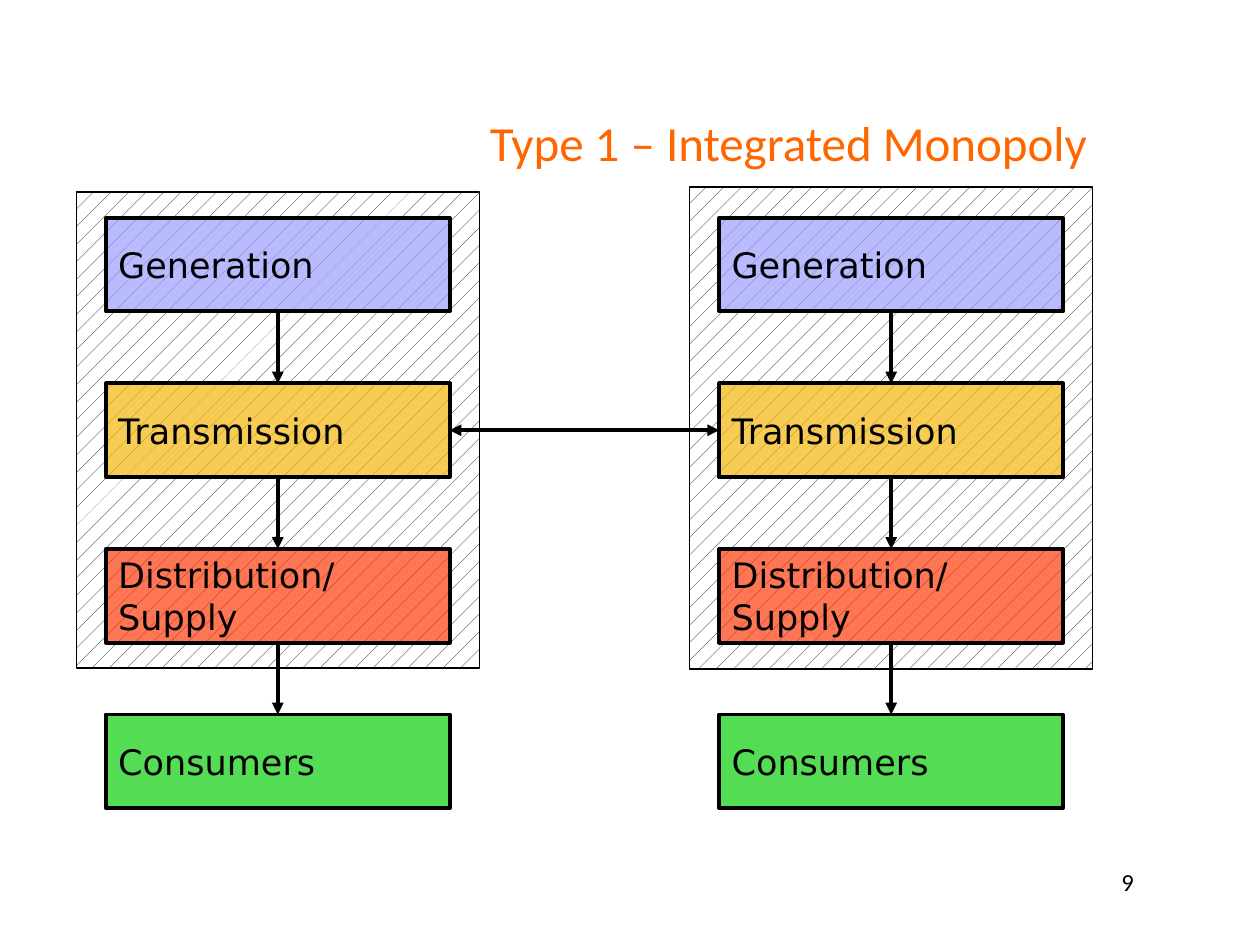
from dataclasses import dataclass

from lxml import etree
from pptx import Presentation
from pptx.dml.color import RGBColor
from pptx.enum.dml import MSO_PATTERN
from pptx.enum.shapes import MSO_CONNECTOR, MSO_SHAPE
from pptx.enum.text import MSO_ANCHOR, PP_ALIGN
from pptx.oxml.ns import qn
from pptx.util import Pt

RECTANGLE = MSO_SHAPE.RECTANGLE
STRAIGHT = MSO_CONNECTOR.STRAIGHT
DOTS = MSO_PATTERN.PERCENT_5
TOP, MIDDLE = MSO_ANCHOR.TOP, MSO_ANCHOR.MIDDLE
LEFT, CENTER, RIGHT = PP_ALIGN.LEFT, PP_ALIGN.CENTER, PP_ALIGN.RIGHT
SIDE_TOP, SIDE_LEFT, SIDE_BOTTOM, SIDE_RIGHT = range(4)


@dataclass(frozen=True)
class Theme:
    ink: str = "000000"
    paper: str = "FFFFFF"
    title: str = "FF6600"
    generation: str = "9999FF"
    transmission: str = "F4B400"
    distribution: str = "FF3300"
    consumers: str = "00CC00"
    stage_opacity: int = 67
    title_font: str = "Calibri"
    stage_font: str = "DejaVu Sans"
    title_size: float = 28
    stage_size: float = 20
    number_size: float = 14
    thin: float = 1
    thick: float = 2.25


THEME = Theme()
STAGES = [
    ("Generation", THEME.generation),
    ("Transmission", THEME.transmission),
    ("Distribution/\nSupply", THEME.distribution),
    ("Consumers", THEME.consumers),
]
STAGE_TOP, STAGE_PITCH = 124.5, 94.6
STAGE_WIDTH, STAGE_HEIGHT = 196.5, 53.5
# Left edge of the stages, then the box of the company around them
COMPANIES = [
    (60.5, (43.7, 109.7, 230.4, 272)),
    (411, (394, 106.7, 230.4, 275.6)),
]


def color(value):
    return RGBColor.from_string(value)


def write_text(shape, text, *, font, size, ink=THEME.ink, align=LEFT,
               anchor=TOP, wrap=True):
    frame = shape.text_frame
    frame.word_wrap = wrap
    frame.vertical_anchor = anchor
    paragraph = frame.paragraphs[0]
    paragraph.text = text.replace("\n", "\v")
    paragraph.alignment = align
    for run in paragraph.runs:
        run.font.name = font
        run.font.size = Pt(size)
        run.font.color.rgb = color(ink)


def add_text_box(slide, box, text, **text_format):
    shape = slide.shapes.add_textbox(*map(Pt, box))
    write_text(shape, text, **text_format)


def add_rectangle(slide, box, line_width):
    shape = slide.shapes.add_shape(RECTANGLE, *map(Pt, box))
    shape.shadow.inherit = False
    shape.line.color.rgb = color(THEME.ink)
    shape.line.width = Pt(line_width)
    return shape


def add_company_panel(slide, box):
    panel = add_rectangle(slide, box, THEME.thin)
    panel.fill.patterned()
    panel.fill.pattern = DOTS
    panel.fill.fore_color.rgb = color(THEME.ink)
    panel.fill.back_color.rgb = color(THEME.paper)


def add_stage(slide, left, top, text, fill):
    stage = add_rectangle(slide, (left, top, STAGE_WIDTH, STAGE_HEIGHT), THEME.thick)
    stage.fill.solid()
    stage.fill.fore_color.rgb = color(fill)
    fill_color = stage.fill._xPr.find(qn("a:solidFill"))[0]
    etree.SubElement(fill_color, qn("a:alpha"), val=str(THEME.stage_opacity * 1000))
    write_text(stage, text, font=THEME.stage_font, size=THEME.stage_size,
               anchor=MIDDLE, wrap="\n" in text)
    return stage


def add_arrow(slide, start, start_side, end, end_side, both_ways=False):
    arrow = slide.shapes.add_connector(STRAIGHT, 0, 0, 0, 0)
    arrow.begin_connect(start, start_side)
    arrow.end_connect(end, end_side)
    arrow.line.color.rgb = color(THEME.ink)
    arrow.line.width = Pt(THEME.thick)
    line = arrow.line._get_or_add_ln()
    for tag in ["a:headEnd", "a:tailEnd"] if both_ways else ["a:tailEnd"]:
        etree.SubElement(line, qn(tag), type="triangle")
    etree.SubElement(arrow._element.spPr, qn("a:effectLst"))


def add_company(slide, left, panel_box):
    """Draw one company's supply chain and return its stages."""
    add_company_panel(slide, panel_box)
    stages = [
        add_stage(slide, left, STAGE_TOP + row * STAGE_PITCH, text, fill)
        for row, (text, fill) in enumerate(STAGES)
    ]
    for upper, lower in zip(stages, stages[1:]):
        add_arrow(slide, upper, SIDE_BOTTOM, lower, SIDE_TOP)
    return stages


def main():
    presentation = Presentation()
    presentation.slide_width, presentation.slide_height = Pt(720), Pt(540)
    slide = presentation.slides.add_slide(presentation.slide_layouts[6])

    add_text_box(slide, (516, 492, 139, 37.5), "9", font=THEME.title_font,
                 size=THEME.number_size, align=RIGHT)
    add_text_box(slide, (241, 60.5, 419, 70.5), "Type 1 – Integrated Monopoly",
                 font=THEME.title_font, size=THEME.title_size, ink=THEME.title,
                 align=CENTER)
    first, second = [add_company(slide, *company) for company in COMPANIES]
    add_arrow(slide, first[1], SIDE_RIGHT, second[1], SIDE_LEFT, both_ways=True)
    presentation.save("out.pptx")


if __name__ == "__main__":
    main()
